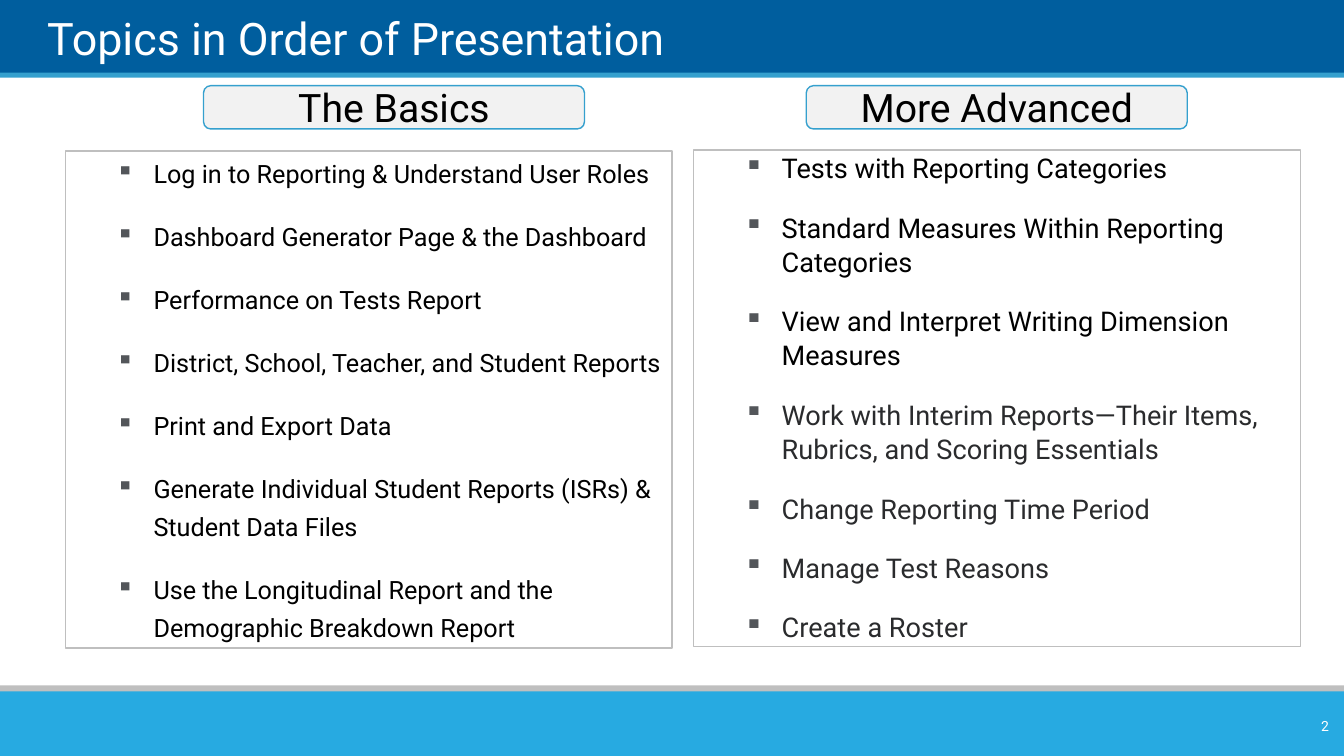
from lxml import etree
from pptx import Presentation
from pptx.dml.color import RGBColor
from pptx.enum.shapes import MSO_SHAPE
from pptx.enum.text import MSO_ANCHOR, MSO_AUTO_SIZE, PP_ALIGN
from pptx.oxml.ns import qn
from pptx.util import Cm, Pt

RECT, ROUND = MSO_SHAPE.RECTANGLE, MSO_SHAPE.ROUNDED_RECTANGLE
TOP, MIDDLE, BOTTOM = MSO_ANCHOR.TOP, MSO_ANCHOR.MIDDLE, MSO_ANCHOR.BOTTOM
LEFT, CENTER, RIGHT = PP_ALIGN.LEFT, PP_ALIGN.CENTER, PP_ALIGN.RIGHT
FONT = "Roboto"
SLIDE_W, SLIDE_H = 33.87, 19.05
BLACK, CHARCOAL, WHITE = "000000", "2A2B2D", "FFFFFF"
SKY, SILVER, BULLET = "35A0CE", "BFBFBF", "53565A"

BANDS = [
    (-0.03, 1.9, "005E9E"),
    (1.83, 0.13, SKY),
    (17.27, 0.36, SILVER),
    (17.42, 1.63, "27AAE1"),
]
BASICS = [
    ("Log in to Reporting & Understand User Roles", BLACK),
    ("Dashboard Generator Page & the Dashboard", BLACK),
    ("Performance on Tests Report", BLACK),
    ("District, School, Teacher, and Student Reports", BLACK),
    ("Print and Export Data", BLACK),
    ("Generate Individual Student Reports (ISRs) & Student Data Files", BLACK),
    ("Use the Longitudinal Report and the Demographic Breakdown Report", BLACK),
]
ADVANCED = [
    ("Tests with Reporting Categories", BLACK),
    ("Standard Measures Within Reporting Categories", BLACK),
    ("View and Interpret Writing Dimension Measures", BLACK),
    ("Work with Interim Reports—Their Items, Rubrics, and Scoring Essentials", CHARCOAL),
    ("Change Reporting Time Period", CHARCOAL),
    ("Manage Test Reasons", CHARCOAL),
    ("Create a Roster", CHARCOAL),
]


def rgb(value):
    return RGBColor.from_string(value)


def set_frame(tf, anchor, inset=None):
    tf.word_wrap = True
    tf.auto_size = MSO_AUTO_SIZE.NONE
    tf.vertical_anchor = anchor
    if inset is not None:
        tf.margin_left = tf.margin_top = tf.margin_right = tf.margin_bottom = Cm(inset)


def write(p, text, size, color=BLACK, align=LEFT, spacing=None, before=0):
    p.alignment = align
    p.space_before = Pt(before)
    if spacing:
        p.line_spacing = spacing
    r = p.add_run()
    r.text = text
    r.font.name = FONT
    r.font.size = Pt(size)
    r.font.color.rgb = rgb(color)


def add_bullet(p):
    ppr = p._p.get_or_add_pPr()
    ppr.set("marL", str(Cm(2.22)))
    ppr.set("indent", str(-Cm(0.95)))
    color = etree.SubElement(ppr, qn("a:buClr"))
    etree.SubElement(color, qn("a:srgbClr"), val=BULLET)
    etree.SubElement(ppr, qn("a:buChar"), char="▪")


def add_box(s, kind, left, top, width, height, fill=None, line=None):
    sp = s.shapes.add_shape(kind, Cm(left), Cm(top), Cm(width), Cm(height))
    sp.shadow.inherit = False
    if fill:
        sp.fill.solid()
        sp.fill.fore_color.rgb = rgb(fill)
    else:
        sp.fill.background()
    if line:
        sp.line.color.rgb = rgb(line)
        sp.line.width = Pt(1)
    else:
        sp.line.fill.background()
    return sp


def set_title(s, text):
    sp = s.shapes.title
    sp.left, sp.top, sp.width, sp.height = Cm(1.19), Cm(0.18), Cm(30.61), Cm(1.45)
    set_frame(sp.text_frame, BOTTOM, inset=0)
    write(sp.text_frame.paragraphs[0], text, 32, WHITE)
    sp._element.getparent().append(sp._element)


def add_heading(s, left, text):
    sp = add_box(s, ROUND, left, 2.16, 9.6, 1.09, fill="F2F2F2", line=SKY)
    set_frame(sp.text_frame, MIDDLE)
    write(sp.text_frame.paragraphs[0], text, 28, align=CENTER)


def add_topics(s, left, top, topics, size, spacing):
    sp = add_box(s, RECT, left, top, 15.29, 12.52, line=SILVER)
    tf = sp.text_frame
    set_frame(tf, TOP, inset=0)
    for i, (text, color) in enumerate(topics):
        p = tf.add_paragraph() if i else tf.paragraphs[0]
        add_bullet(p)
        write(p, text, size, color, spacing=spacing, before=18 if i else 0)


def add_page_number(s, text):
    sp = s.shapes.add_textbox(Cm(31.78), Cm(17.91), Cm(1.96), Cm(0.76))
    set_frame(sp.text_frame, MIDDLE)
    write(sp.text_frame.paragraphs[0], text, 10, WHITE, align=RIGHT)


def main():
    prs = Presentation()
    prs.slide_width, prs.slide_height = Cm(SLIDE_W), Cm(SLIDE_H)
    s = prs.slides.add_slide(prs.slide_layouts[5])
    for top, height, color in BANDS:
        add_box(s, RECT, 0, top, SLIDE_W, height, fill=color)
    set_title(s, "Topics in Order of Presentation")
    add_heading(s, 5.13, "The Basics")
    add_topics(s, 1.65, 3.81, BASICS, size=18, spacing=1.25)
    add_heading(s, 20.32, "More Advanced")
    add_topics(s, 17.48, 3.78, ADVANCED, size=19.4, spacing=1.05)
    add_page_number(s, "2")
    prs.save("out.pptx")


if __name__ == "__main__":
    main()
